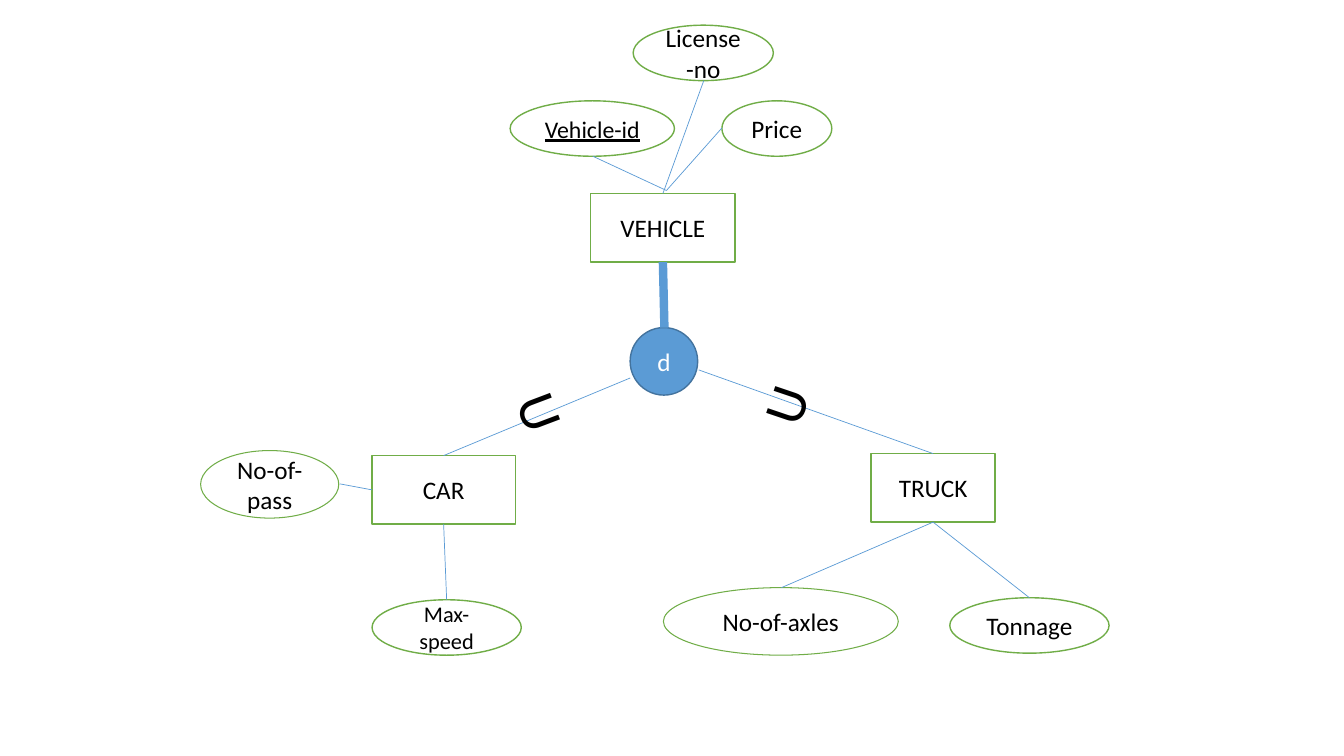
from typing import NamedTuple, Optional

from lxml import etree
from pptx import Presentation
from pptx.dml.color import RGBColor
from pptx.enum import shapes, text
from pptx.oxml.ns import qn
from pptx.util import Inches, Pt

WHITE = RGBColor(0xFF, 0xFF, 0xFF)
BLACK = RGBColor(0x00, 0x00, 0x00)
GREEN = RGBColor(0x70, 0xAD, 0x47)
BLUE = RGBColor(0x5B, 0x9B, 0xD5)
DARK_BLUE = RGBColor(0x43, 0x73, 0x9E)
FONT = "Calibri"
RECTANGLE = shapes.MSO_SHAPE.RECTANGLE
OVAL = shapes.MSO_SHAPE.OVAL
TOP, LEFT, BOTTOM = 0, 1, 2


class Node(NamedTuple):
    label: str
    left: float
    top: float
    width: float
    height: float
    kind: shapes.MSO_SHAPE = OVAL
    size: float = 18
    key: bool = False
    fill: Optional[RGBColor] = WHITE
    outline: RGBColor = GREEN
    weight: float = 1
    ink: RGBColor = BLACK


class Link(NamedTuple):
    start: tuple[float, float]
    end: tuple[float, float]
    entity: Optional[str] = None  # rectangle joined at the start
    side: int = BOTTOM
    weight: float = 0.5


class SubsetSign(NamedTuple):
    left: float
    top: float
    rotation: float


NODES = [
    Node("TRUCK", 8.64, 4.5, 1.23, 0.68, RECTANGLE),
    Node("Tonnage", 9.42, 5.93, 1.58, 0.55),
    Node("No-of-axles", 6.58, 5.83, 2.33, 0.67, fill=None, weight=0.75),
    Node("CAR", 3.69, 4.52, 1.42, 0.68, RECTANGLE),
    Node("Max-speed", 3.69, 5.95, 1.48, 0.55, size=16),
    Node("No-of-pass", 1.99, 4.47, 1.37, 0.67, fill=None, weight=0.75),
    Node("Vehicle-id", 5.06, 1, 1.63, 0.55, size=17, key=True),
    Node("Price", 7.16, 1, 1.09, 0.55),
    Node("License-no", 6.28, 0.25, 1.39, 0.55),
    Node("VEHICLE", 5.86, 1.92, 1.43, 0.68, RECTANGLE),
    Node("d", 6.25, 3.25, 0.67, 0.67, fill=BLUE, outline=DARK_BLUE, ink=WHITE),
]

LINKS = [
    Link((9.25, 5.18), (10.21, 5.93), "TRUCK"),
    Link((9.25, 5.18), (7.75, 5.83), "TRUCK"),
    Link((4.4, 5.2), (4.43, 5.95), "CAR"),
    Link((3.69, 4.86), (3.37, 4.8), "CAR", LEFT),
    Link((6.61, 1.89), (5.88, 1.55)),
    Link((6.61, 1.89), (7.16, 1.27)),
    Link((6.58, 1.92), (6.98, 0.8), "VEHICLE", TOP),
    Link((6.58, 2.6), (6.59, 3.25), "VEHICLE", weight=6),
    Link((4.4, 4.52), (6.25, 3.75), "CAR", TOP),
    Link((9.25, 4.5), (6.93, 3.67), "TRUCK", TOP),
]

SUBSET_SIGNS = [SubsetSign(5.1, 3.7, 69.3), SubsetSign(7.5, 3.62, 288.7)]


def write_label(frame, label: str, size: float, ink: RGBColor, underline: bool = False) -> None:
    frame.text = label
    font = frame.paragraphs[0].runs[0].font
    font.name = FONT
    font.size = Pt(size)
    font.color.rgb = ink
    if underline:
        font.underline = True


def draw_node(page, node: Node):
    shape = page.shapes.add_shape(
        node.kind, Inches(node.left), Inches(node.top), Inches(node.width), Inches(node.height)
    )
    shape.shadow.inherit = False
    if node.fill is None:
        shape.fill.background()
    else:
        shape.fill.solid()
        shape.fill.fore_color.rgb = node.fill
    shape.line.color.rgb = node.outline
    shape.line.width = Pt(node.weight)
    frame = shape.text_frame
    frame.word_wrap = True
    frame.vertical_anchor = text.MSO_ANCHOR.MIDDLE
    write_label(frame, node.label, node.size, node.ink, node.key)
    frame.paragraphs[0].alignment = text.PP_ALIGN.CENTER
    return shape


def draw_link(page, link: Link, drawn: dict) -> None:
    line = page.shapes.add_connector(
        shapes.MSO_CONNECTOR.STRAIGHT, *map(Inches, link.start + link.end)
    )
    if link.entity:
        line.begin_connect(drawn[link.entity], link.side)
    line.line.color.rgb = BLUE
    line.line.width = Pt(link.weight)
    etree.SubElement(line._element.spPr, qn("a:effectLst"))


def draw_subset_sign(page, sign: SubsetSign) -> None:
    box = page.shapes.add_textbox(
        Inches(sign.left), Inches(sign.top), Inches(0.56), Inches(0.77)
    )
    box.rotation = sign.rotation
    box.text_frame.word_wrap = False
    box.text_frame.auto_size = text.MSO_AUTO_SIZE.SHAPE_TO_FIT_TEXT
    write_label(box.text_frame, "U", 40, BLACK)


def main() -> None:
    deck = Presentation()
    deck.slide_width = Inches(13.33)
    deck.slide_height = Inches(7.5)
    page = deck.slides.add_slide(deck.slide_layouts.get_by_name("Blank"))
    drawn = {node.label: draw_node(page, node) for node in NODES}
    for link in LINKS:
        draw_link(page, link, drawn)
    for sign in SUBSET_SIGNS:
        draw_subset_sign(page, sign)
    deck.save("out.pptx")


if __name__ == "__main__":
    main()
